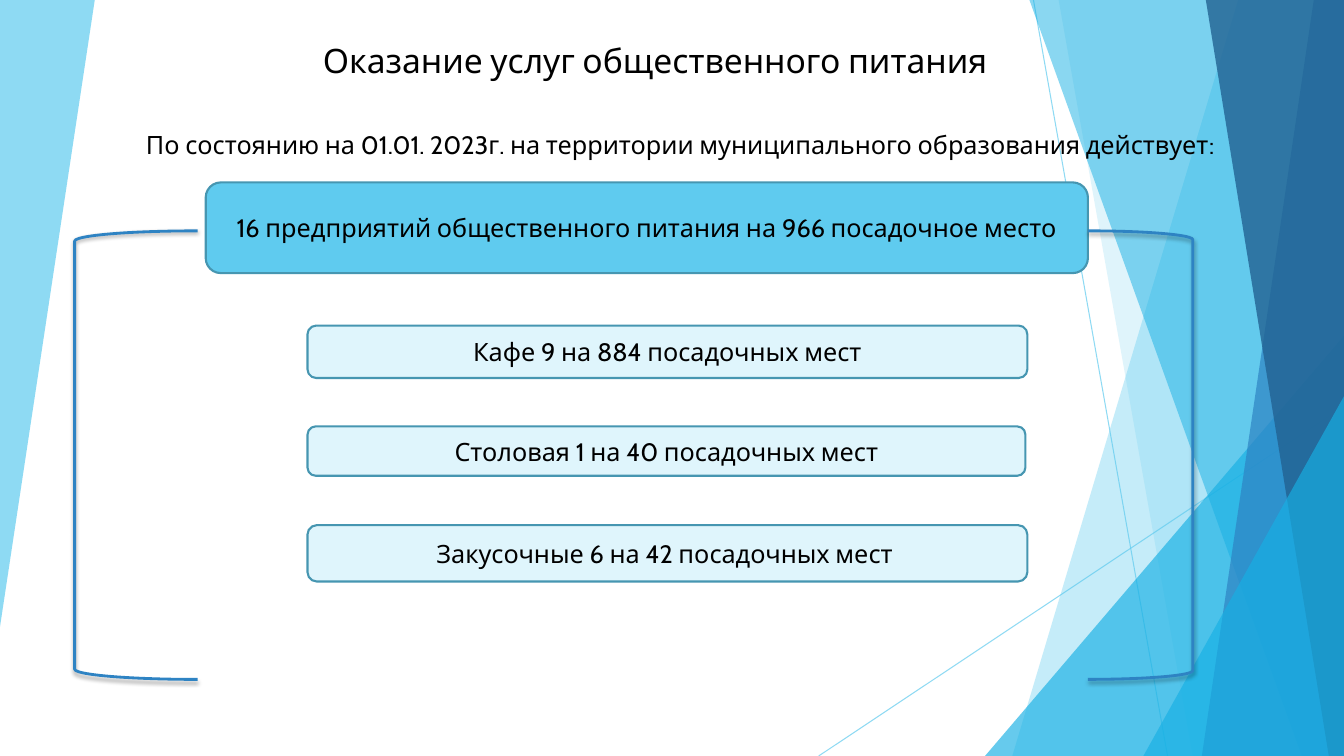
"""Build the slide on public catering services."""
import lxml.etree
import pptx
import pptx.dml.color
import pptx.enum.shapes
import pptx.enum.text
import pptx.oxml.ns
import pptx.util

Inches = pptx.util.Inches
Pt = pptx.util.Pt
RGBColor = pptx.dml.color.RGBColor
Shape = pptx.enum.shapes.MSO_SHAPE
Align = pptx.enum.text.PP_ALIGN
Anchor = pptx.enum.text.MSO_ANCHOR
qn = pptx.oxml.ns.qn

FONT = "Cabin"
BLACK = RGBColor(0x00, 0x00, 0x00)
SKY = RGBColor(0x5F, 0xCB, 0xEF)
PALE = RGBColor(0xDF, 0xF5, 0xFC)
CYAN = RGBColor(0x17, 0xB0, 0xE4)
BLUE = RGBColor(0x2E, 0x83, 0xC3)
NAVY = RGBColor(0x22, 0x62, 0x92)
BORDER = RGBColor(0x46, 0x96, 0xB1)

WIDTH, HEIGHT = 13.33, 7.5


def set_opacity(shape, percent):
    """Make the colours of a shape partly transparent."""
    for colour in shape.element.spPr.iter(qn("a:srgbClr")):
        lxml.etree.SubElement(colour, qn("a:alpha"), val=str(percent * 1000))


def add_facet(slide, corners, colour, opacity):
    """Draw a translucent polygon through the given corners."""
    points = [(Inches(x), Inches(y)) for x, y in corners]
    builder = slide.shapes.build_freeform(*points[0])
    builder.add_line_segments(points[1:], close=True)
    paint_facet(builder.convert_to_shape(), colour, opacity)


def add_wedge(slide, left, top):
    """Draw a right triangle that fills the bottom right corner."""
    wedge = slide.shapes.add_shape(
        Shape.ISOSCELES_TRIANGLE, Inches(left), Inches(top),
        Inches(WIDTH - left), Inches(HEIGHT - top))
    wedge.adjustments[0] = 1
    paint_facet(wedge, CYAN, 66)


def paint_facet(facet, colour, opacity):
    """Fill a background facet without outline or shadow."""
    facet.shadow.inherit = False
    facet.fill.solid()
    facet.fill.fore_color.rgb = colour
    facet.line.fill.background()
    set_opacity(facet, opacity)


def add_ray(slide, start, end):
    """Draw a thin background line."""
    ray = slide.shapes.add_connector(
        pptx.enum.shapes.MSO_CONNECTOR.STRAIGHT,
        *(Inches(length) for length in start + end))
    ray.line.color.rgb = SKY
    ray.line.width = Pt(0.75)
    lxml.etree.SubElement(ray.element.spPr, qn("a:effectLst"))
    set_opacity(ray, 70)


def add_background(slide):
    """Draw the faceted backdrop from back to front."""
    add_facet(slide, [(0, 0), (0.94, 0), (0, 6.22)], SKY, 70)
    add_ray(slide, (10.25, 0), (11.58, HEIGHT))
    add_ray(slide, (WIDTH, 4.03), (8.12, HEIGHT))
    for top_left, bottom_left, colour, opacity in (
            (12.28, 10.04, SKY, 36), (10.5, 11.83, SKY, 20)):
        add_band(slide, top_left, bottom_left, colour, opacity)
    add_wedge(slide, 9.77, 3.33)
    for top_left, bottom_left, colour, opacity in (
            (10.21, 12.91, CYAN, 50), (13.03, 11.92, BLUE, 70),
            (11.96, 13.18, NAVY, 80)):
        add_band(slide, top_left, bottom_left, colour, opacity)
    add_wedge(slide, 11.34, 3.93)


def add_band(slide, top_left, bottom_left, colour, opacity):
    """Draw a full-height facet that reaches the right edge."""
    corners = [(top_left, 0), (WIDTH, 0), (WIDTH, HEIGHT), (bottom_left, HEIGHT)]
    add_facet(slide, corners, colour, opacity)


def write(frame, text, size, align, anchor):
    """Put one formatted paragraph in a text frame."""
    frame.text = text
    frame.word_wrap = True
    frame.vertical_anchor = anchor
    paragraph = frame.paragraphs[0]
    paragraph.alignment = align
    font = paragraph.runs[0].font
    font.name = FONT
    font.size = Pt(size)
    font.color.rgb = BLACK


def add_title(slide, text):
    """Place and format the slide title."""
    title = slide.shapes.title
    title.left, title.top = Inches(1.04), Inches(0.12)
    title.width, title.height = Inches(10.99), Inches(0.73)
    write(title.text_frame, text, 24, Align.CENTER, Anchor.BOTTOM)


def add_intro(slide, text):
    """Add the line that introduces the figures."""
    intro = slide.shapes.add_textbox(
        Inches(1.35), Inches(1.23), Inches(11.9), Inches(0.4))
    write(intro.text_frame, text, 18, Align.LEFT, Anchor.TOP)


def add_box(slide, preset, bounds, colour, text):
    """Add an outlined box with centred text."""
    box = slide.shapes.add_shape(preset, *(Inches(length) for length in bounds))
    box.shadow.inherit = False
    box.fill.solid()
    box.fill.fore_color.rgb = colour
    box.line.color.rgb = BORDER
    box.line.width = Pt(1.5)
    write(box.text_frame, text, 18, Align.CENTER, Anchor.MIDDLE)


def add_bracket(slide, preset, left, width):
    """Add a side bracket with a soft shadow below it."""
    bracket = slide.shapes.add_shape(
        preset, Inches(left), Inches(2.29), Inches(width), Inches(4.45))
    bracket.fill.background()
    bracket.line.color.rgb = BLUE
    bracket.line.width = Pt(2)
    bracket.shadow.inherit = False
    effects = bracket.element.spPr.find(qn("a:effectLst"))
    shadow = lxml.etree.SubElement(
        effects, qn("a:outerShdw"), blurRad=str(Pt(3)), dist=str(Pt(2)),
        dir="5400000", rotWithShape="0")
    shade = lxml.etree.SubElement(shadow, qn("a:srgbClr"), val=str(BLACK))
    lxml.etree.SubElement(shade, qn("a:alpha"), val="35000")


def main():
    """Build and save the slide."""
    deck = pptx.Presentation()
    deck.slide_width, deck.slide_height = Inches(WIDTH), Inches(HEIGHT)
    slide = deck.slides.add_slide(deck.slide_layouts.get_by_name("Title Only"))
    add_background(slide)
    add_title(slide, "Оказание услуг общественного питания ")
    add_intro(slide, "По состоянию на 01.01. 2023г. на территории "
                     "муниципального образования действует:")
    add_box(slide, Shape.FLOWCHART_ALTERNATE_PROCESS, (2.04, 1.81, 8.75, 0.9),
            SKY, "16 предприятий общественного питания на 966 посадочное место")
    add_bracket(slide, Shape.LEFT_BRACKET, 0.74, 1.22)
    add_bracket(slide, Shape.RIGHT_BRACKET, 10.79, 1.04)
    for top, width, height, text in (
            (3.23, 7.14, 0.52, "Кафе 9 на 884 посадочных мест"),
            (4.23, 7.12, 0.49, "Столовая 1 на 40 посадочных мест"),
            (5.21, 7.14, 0.56, "Закусочные 6 на 42 посадочных мест ")):
        add_box(slide, Shape.ROUNDED_RECTANGLE, (3.05, top, width, height),
                PALE, text)
    deck.save("out.pptx")


if __name__ == "__main__":
    main()
